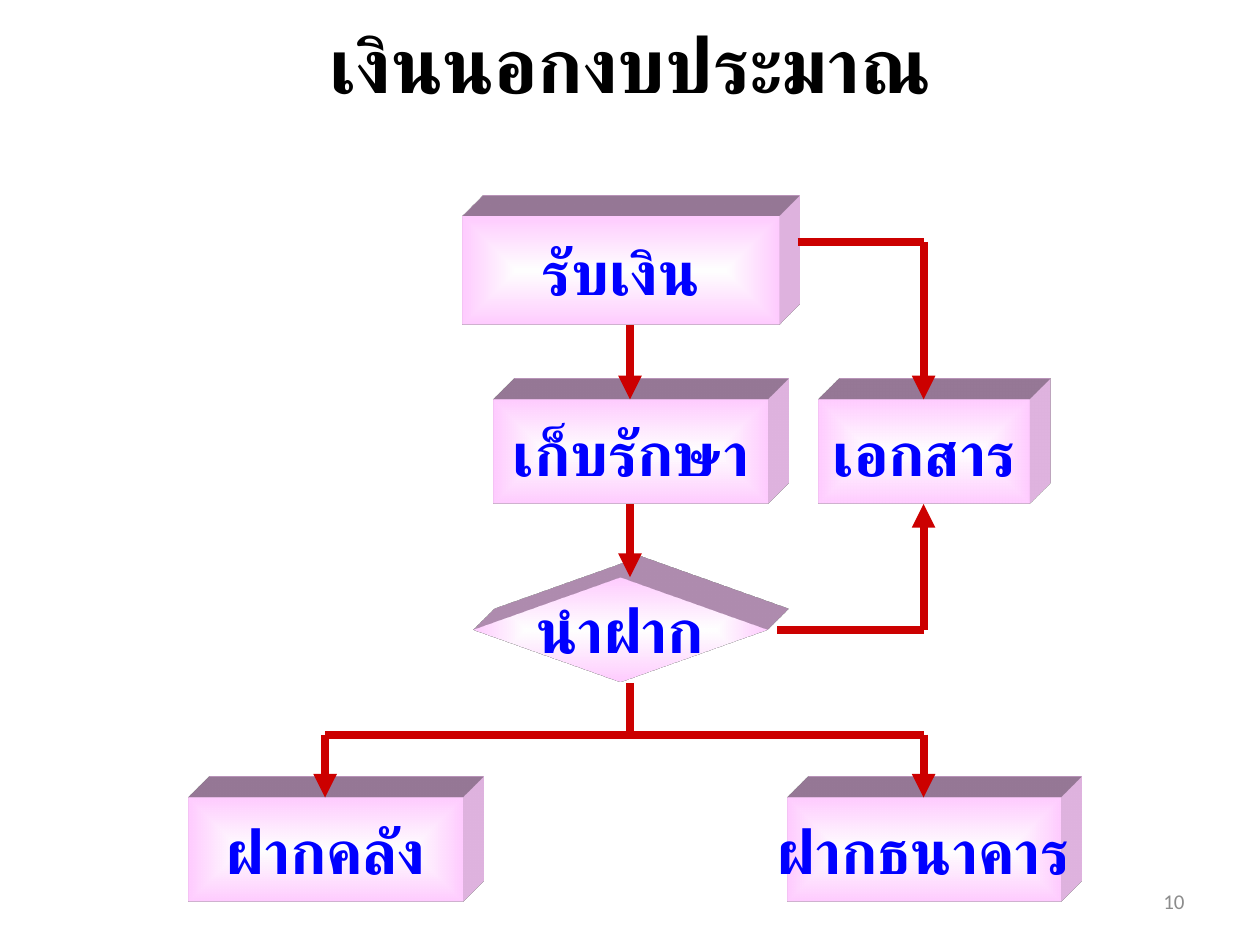
from lxml import etree
from pptx import Presentation
from pptx.dml.color import RGBColor
from pptx.enum import shapes, text
from pptx.oxml import parse_xml
from pptx.oxml.ns import nsdecls, qn
from pptx.util import Inches, Pt

BLACK = RGBColor(0x00, 0x00, 0x00)
WHITE = RGBColor(0xFF, 0xFF, 0xFF)
PINK = RGBColor(0xFF, 0xCC, 0xFF)
BLUE = RGBColor(0x00, 0x00, 0xFF)
RED = RGBColor(0xCC, 0x00, 0x00)
GRAY = RGBColor(0x8C, 0x8C, 0x8C)

GRADIENT_PATH = f'''<a:path {nsdecls("a")} path="shape">
<a:fillToRect l="50000" t="50000" r="50000" b="50000"/></a:path>'''
SCENE = f'''<a:scene3d {nsdecls("a")}>
<a:camera prst="legacyObliqueTopRight"/><a:lightRig rig="legacyFlat3" dir="b"/></a:scene3d>'''
EXTRUSION = f'''<a:sp3d {nsdecls("a")} extrusionH="430200" prstMaterial="legacyMatte">
<a:bevelT w="13500" h="13500" prst="angle"/><a:bevelB w="13500" h="13500" prst="angle"/>
<a:extrusionClr><a:srgbClr val="{PINK}"/></a:extrusionClr></a:sp3d>'''


def write(shape, words, font, size, color, bold, alignment, wrap):
    frame = shape.text_frame
    frame.text = words
    frame.word_wrap = wrap
    frame.vertical_anchor = text.MSO_ANCHOR.MIDDLE
    paragraph = frame.paragraphs[0]
    paragraph.alignment = alignment
    run = paragraph.runs[0]
    run.font.name = font
    run.font.size = Pt(size)
    run.font.bold = bold
    run.font.color.rgb = color
    etree.SubElement(run.font._element, qn("a:cs"), typeface=font)


presentation = Presentation()
presentation.slide_width = Inches(10)
presentation.slide_height = Inches(7.5)
slide = presentation.slides.add_slide(presentation.slide_layouts[6])

title = slide.shapes.add_textbox(Inches(0.75), Inches(0), Inches(8.5), Inches(1))
write(title, "เงินนอกงบประมาณ", "Roboto", 44, BLACK, True, text.PP_ALIGN.CENTER, True)

RECTANGLE = shapes.MSO_SHAPE.RECTANGLE
DECISION = shapes.MSO_SHAPE.FLOWCHART_DECISION
steps = [
    ("รับเงิน", RECTANGLE, 3.67, 1.72, 2.51, 0.86),
    ("เก็บรักษา", RECTANGLE, 3.92, 3.17, 2.17, 0.83),
    ("เอกสาร", RECTANGLE, 6.5, 3.17, 1.67, 0.83),
    ("นำฝาก", DECISION, 3.76, 4.58, 2.33, 0.83),
    ("ฝากคลัง", RECTANGLE, 1.5, 6.33, 2.17, 0.83),
    ("ฝากธนาคาร", RECTANGLE, 6.25, 6.33, 2.17, 0.83),
]
for words, kind, left, top, width, height in steps:
    shape = slide.shapes.add_shape(kind, Inches(left), Inches(top), Inches(width), Inches(height))
    shape.fill.gradient()
    for stop, color in zip(shape.fill.gradient_stops, (WHITE, PINK)):
        stop.color.rgb = color
    properties = shape._element.spPr
    linear = properties.find(qn("a:gradFill")).find(qn("a:lin"))
    linear.getparent().replace(linear, parse_xml(GRADIENT_PATH))
    shape.line.fill.background()
    shape.shadow.inherit = False
    properties.append(parse_xml(SCENE))
    properties.append(parse_xml(EXTRUSION))
    write(shape, words, "Roboto", 35, BLUE, True, text.PP_ALIGN.CENTER, False)

LEFT, MIDDLE, RIGHT = 2.58, 5, 7.33
BRANCH = 5.83
links = [
    (MIDDLE, 4, MIDDLE, 4.58, True),
    (MIDDLE, 2.58, MIDDLE, 3.17, True),
    (6.33, 1.92, RIGHT, 1.92, False),
    (RIGHT, 1.92, RIGHT, 3.17, True),
    (6.17, 5, RIGHT, 5, False),
    (RIGHT, 5, RIGHT, 4, True),
    (MIDDLE, 5.42, MIDDLE, BRANCH, False),
    (LEFT, BRANCH, RIGHT, BRANCH, False),
    (LEFT, BRANCH, LEFT, 6.33, True),
    (RIGHT, BRANCH, RIGHT, 6.33, True),
]
for start_x, start_y, end_x, end_y, arrow in links:
    connector = slide.shapes.add_connector(
        shapes.MSO_CONNECTOR.STRAIGHT,
        Inches(start_x), Inches(start_y), Inches(end_x), Inches(end_y))
    connector.line.color.rgb = RED
    connector.line.width = Pt(4.5)
    if arrow:
        etree.SubElement(connector.line._get_or_add_ln(), qn("a:tailEnd"), type="triangle")
    etree.SubElement(connector._element.spPr, qn("a:effectLst"))

number = slide.shapes.add_textbox(Inches(7.17), Inches(6.95), Inches(2.33), Inches(0.4))
write(number, "10", "Calibri", 12, GRAY, False, text.PP_ALIGN.RIGHT, True)

presentation.save("out.pptx")
